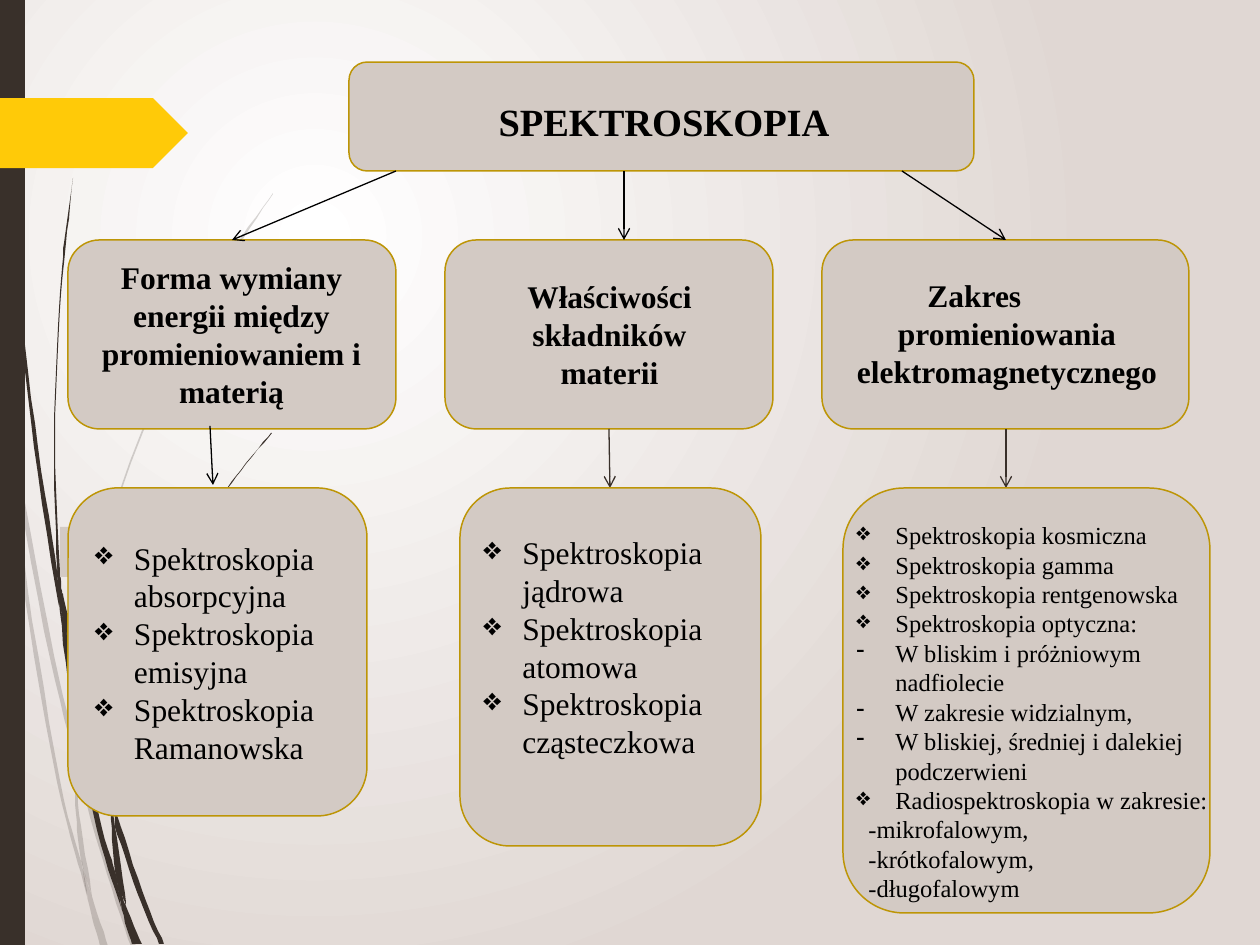
from lxml import etree
from pptx import Presentation
from pptx.dml.color import RGBColor
from pptx.enum.shapes import MSO_CONNECTOR, MSO_SHAPE
from pptx.enum.text import MSO_ANCHOR, MSO_AUTO_SIZE, PP_ALIGN
from pptx.oxml import parse_xml
from pptx.oxml.ns import nsdecls, qn
from pptx.util import Emu, Pt

EMU_PER_PX = 914400 / 126
FONT = "Times New Roman"
BLACK = RGBColor(0x00, 0x00, 0x00)
BROWN = RGBColor(0x39, 0x30, 0x2A)
YELLOW = RGBColor(0xFF, 0xCA, 0x08)
BEIGE = RGBColor(0xD3, 0xCA, 0xC4)
GOLD = RGBColor(0xBD, 0x95, 0x06)
WHITE = RGBColor(0xFF, 0xFF, 0xFF)
HAZE = RGBColor(0xE0, 0xD7, 0xD3)
DIAMOND, DASH = "❖", "-"

# Grass blades: (one edge, the edge back), as knots in px
PALE_BLADES = [
    ([(0, 355), (8, 406), (10, 441)], [(9, 433), (0, 377)]),
    ([(13, 435), (54, 655), (74, 739)], [(74, 755), (50, 658), (15, 474), (13, 435)]),
    ([(77, 751), (111, 872), (136, 946)], [(131, 946), (107, 874), (77, 769)]),
    ([(10, 441), (15, 474), (28, 591), (60, 780), (81, 861), (88, 900)],
     [(81, 873), (57, 782), (24, 592), (10, 441)]),
    ([(73, 755), (76, 814), (81, 861), (92, 896)], [(91, 890), (79, 814), (77, 769)]),
    ([(77, 751), (77, 736), (96, 582), (140, 440), (200, 309), (236, 249), (273, 194)],
     [(273, 193), (234, 248), (199, 307), (139, 438), (94, 581), (74, 736)]),
    ([(82, 861), (88, 900), (100, 946)], [(108, 946), (92, 896), (84, 872)]),
]
DARK_BLADES = [
    ([(3, 0), (6, 139), (18, 294), (34, 447), (58, 601)],
     [(59, 606), (57, 571), (38, 447), (19, 292), (8, 137), (4, 0)]),
    ([(63, 595), (97, 743), (111, 795)], [(111, 813), (92, 746), (67, 636), (63, 595)]),
    ([(115, 808), (118, 818), (142, 890), (164, 944)], [(159, 944), (137, 892), (115, 827)]),
    ([(59, 601), (67, 636), (76, 701), (102, 828), (115, 871), (122, 910)],
     [(116, 892), (97, 830), (71, 702), (59, 601)]),
    ([(63, 595), (60, 571), (55, 440), (60, 309), (66, 243), (73, 178)],
     [(64, 243), (59, 309), (54, 440), (57, 566), (62, 595)]),
    ([(57, 566), (59, 601), (67, 636)], [(63, 595), (62, 595)]),
    ([(111, 795), (127, 694), (163, 597), (212, 510), (241, 470), (271, 433)],
     [(272, 433), (241, 471), (213, 512), (165, 600), (130, 696), (115, 798), (115, 808)]),
    ([(111, 813), (115, 871), (126, 906)], [(126, 902), (115, 827), (111, 795)]),
    ([(115, 871), (122, 910), (132, 944)], [(142, 944), (126, 906), (121, 890)]),
]


def px(length):
    return Emu(round(length * EMU_PER_PX))


def smooth_edge(knots, steps=6):
    """Points of a Catmull-Rom curve through the knots."""
    padded = [knots[0], *knots, knots[-1]]
    points = []
    for a, b, c, d in zip(padded, padded[1:], padded[2:], padded[3:]):
        for step in range(steps):
            t = step / steps
            points.append(tuple(
                q + t * (r - p) / 2 + t * t * (2 * p - 5 * q + 4 * r - s) / 2
                + t ** 3 * (3 * q - p - 3 * r + s) / 2
                for p, q, r, s in zip(a, b, c, d)))
    return points + [knots[-1]]


def set_background(slide):
    stops = "".join(f'<a:gs pos="{position}"><a:srgbClr val="{color}"/></a:gs>'
                    for position, color in ((0, WHITE), (100000, HAZE)))
    slide.element.cSld.insert(0, parse_xml(
        f'<p:bg {nsdecls("p", "a")}><p:bgPr><a:gradFill rotWithShape="1">'
        f'<a:gsLst>{stops}</a:gsLst><a:path path="circle">'
        '<a:fillToRect l="50000" t="50000" r="100000" b="100000"/></a:path>'
        '</a:gradFill><a:effectLst/></p:bgPr></p:bg>'))


def paint(shape, fill, line=None):
    shape.shadow.inherit = False
    shape.fill.solid()
    shape.fill.fore_color.rgb = fill
    if line is None:
        shape.line.fill.background()
    else:
        shape.line.color.rgb = line
        shape.line.width = Pt(0.85)


def add_blade(slide, edges, opacity=None):
    start, *points = smooth_edge(edges[0]) + smooth_edge(edges[1])
    builder = slide.shapes.build_freeform(*start, scale=EMU_PER_PX)
    builder.add_line_segments(points, close=True)
    blade = builder.convert_to_shape()
    paint(blade, BROWN)
    if opacity:
        color = blade.element.spPr.find(".//" + qn("a:srgbClr"))
        etree.SubElement(color, qn("a:alpha")).set("val", str(opacity * 1000))


def add_box(slide, box, kind=MSO_SHAPE.RECTANGLE, fill=BEIGE, line=None):
    shape = slide.shapes.add_shape(kind, *map(px, box))
    paint(shape, fill, line)
    return shape


def add_card(slide, box):
    return add_box(slide, box, MSO_SHAPE.ROUNDED_RECTANGLE, line=GOLD)


def add_arrow(slide, start, end, color=BLACK):
    arrow = slide.shapes.add_connector(MSO_CONNECTOR.STRAIGHT, *map(px, start + end))
    arrow.line.color.rgb = color
    arrow.line.width = Pt(0.75)
    etree.SubElement(arrow.line._get_or_add_ln(), qn("a:tailEnd")).set("type", "arrow")
    etree.SubElement(arrow.element.spPr, qn("a:effectLst"))


def write(shape, lines, size, align, bold=False, anchor=MSO_ANCHOR.TOP):
    frame = shape.text_frame
    frame.text = "\n".join(lines)
    frame.word_wrap = True
    frame.auto_size = MSO_AUTO_SIZE.NONE
    frame.vertical_anchor = anchor
    for paragraph in frame.paragraphs:
        paragraph.alignment = align
        for run in paragraph.runs:
            run.font.name = FONT
            run.font.size = Pt(size)
            run.font.bold = bold
            run.font.color.rgb = BLACK


def indent(paragraph, margin, first_line=0):
    properties = paragraph._p.get_or_add_pPr()
    properties.set("marL", str(px(margin)))
    properties.set("indent", str(px(first_line)))
    return properties


def write_list(shape, items, size=18, anchor=MSO_ANCHOR.TOP):
    """Items are (bullet, text); without a bullet the line is only indented."""
    write(shape, [text for _, text in items], size, PP_ALIGN.LEFT, anchor=anchor)
    for paragraph, (bullet, _) in zip(shape.text_frame.paragraphs, items):
        if bullet:
            properties = indent(paragraph, 39, -39)
            etree.SubElement(properties, qn("a:buChar")).set("char", bullet)
        else:
            indent(paragraph, 12)


def kinds(*names):
    return [(DIAMOND, f"Spektroskopia {name}") for name in names]


def main():
    presentation = Presentation()
    presentation.slide_width, presentation.slide_height = px(1260), px(945)
    slide = presentation.slides.add_slide(presentation.slide_layouts[5])

    # Backdrop
    set_background(slide)
    for blade in PALE_BLADES:
        add_blade(slide, blade, opacity=20)
    for blade in DARK_BLADES:
        add_blade(slide, blade)
    add_box(slide, (0, 0, 25, 945), fill=BROWN)
    add_box(slide, (0, 98, 188, 70), MSO_SHAPE.PENTAGON, YELLOW)

    # Cards of the two upper levels, and the arrows
    for box in ((349, 62, 625, 109), (68, 240, 328, 189),
                (445, 240, 328, 189), (822, 240, 367, 189)):
        add_card(slide, box)
    for start, end in (((396, 171), (232, 240)), ((624, 171), (624, 240)),
                       ((902, 171), (1006, 240)), ((210, 426), (213, 485))):
        add_arrow(slide, start, end)
    for start, end in (((609, 429), (610, 488)), ((1006, 429), (1006, 488))):
        add_arrow(slide, start, end, BROWN)

    # Title, brought in front of its card
    title = slide.shapes.title
    title.left, title.top, title.width, title.height = map(px, (375, 92, 578, 59))
    paint(title, BEIGE)
    write(title, ["SPEKTROSKOPIA"], 22, PP_ALIGN.CENTER, bold=True)
    title.element.getparent().append(title.element)

    # Criteria; the last one starts with a line left of its centre
    for box, lines in (
            ((78, 252, 307, 165), ["Forma wymiany energii między promieniowaniem i materią"]),
            ((471, 271, 277, 127), ["Właściwości składników materii"]),
            ((833, 270, 348, 127), ["Zakres", "promieniowania elektromagnetycznego"])):
        label = add_box(slide, box)
        write(label, lines, 18, PP_ALIGN.CENTER, bold=True)
    first, second = label.text_frame.paragraphs
    first.alignment = PP_ALIGN.LEFT
    indent(first, 82)
    indent(second, 0)

    # Lists of spectroscopy kinds
    add_box(slide, (60, 527, 307, 50))
    write_list(add_card(slide, (68, 488, 299, 328)),
               kinds("absorpcyjna", "emisyjna", "Ramanowska"), anchor=MSO_ANCHOR.MIDDLE)
    add_card(slide, (460, 488, 301, 358))
    write_list(add_box(slide, (471, 527, 277, 242)),
               kinds("jądrowa", "atomowa", "cząsteczkowa"))
    add_card(slide, (843, 488, 367, 425))
    ranges = slide.shapes.add_textbox(*map(px, (844, 514, 387, 398)))
    write_list(ranges, kinds("kosmiczna", "gamma", "rentgenowska", "optyczna:") + [
        (DASH, "W bliskim i próżniowym nadfiolecie"),
        (DASH, "W zakresie widzialnym,"),
        (DASH, "W bliskiej, średniej i dalekiej podczerwieni"),
        (DIAMOND, "Radiospektroskopia w zakresie:"),
        (None, "-mikrofalowym,"), (None, "-krótkofalowym,"), (None, "-długofalowym")], 14)

    presentation.save("out.pptx")


if __name__ == "__main__":
    main()
